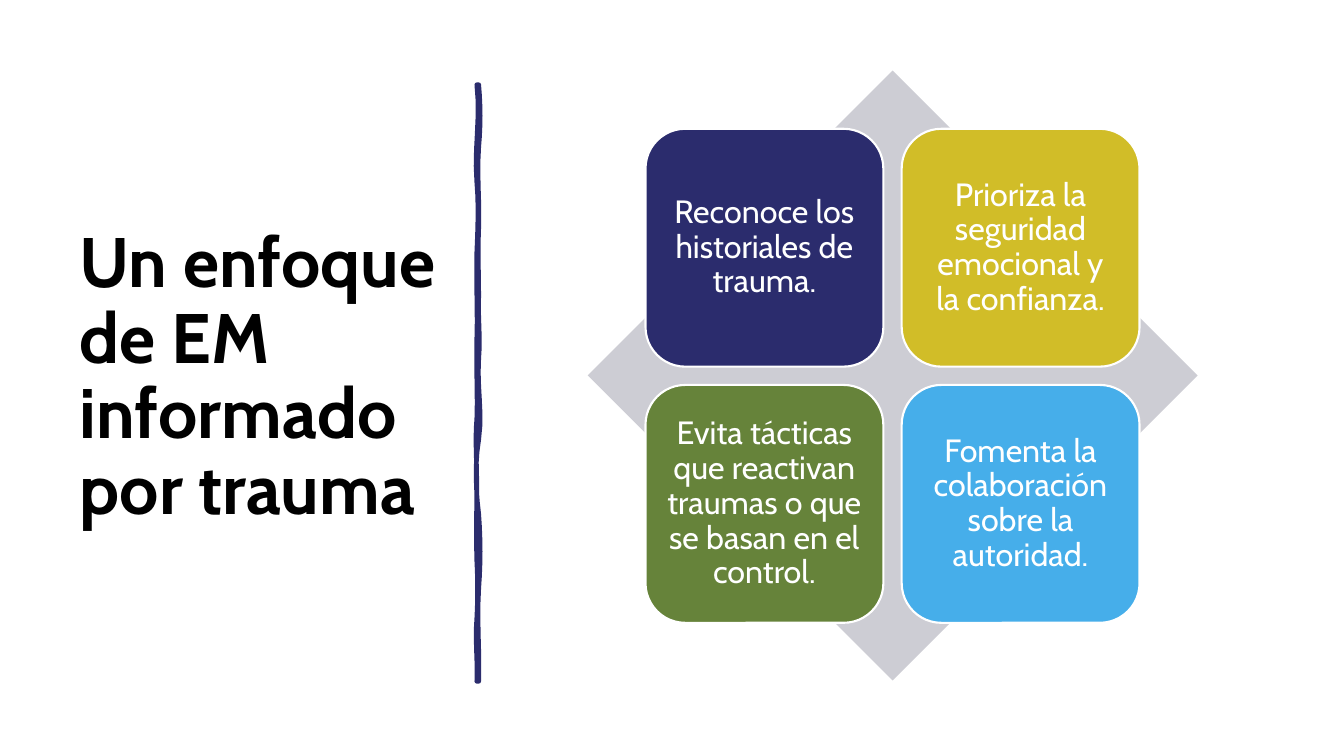
"""Builds a slide on a trauma-informed approach with four principle cards."""
from lxml.etree import SubElement
from pptx import Presentation
from pptx.dml.color import RGBColor
from pptx.enum.shapes import MSO_SHAPE
from pptx.enum.text import MSO_ANCHOR, MSO_AUTO_SIZE, PP_ALIGN
from pptx.oxml.ns import qn
from pptx.util import Pt

NAVY, WHITE, BLACK, GREY = "2B2C6D", "FFFFFF", "000000", "CDCDD4"
PRINCIPLES = [
    ("Reconoce los historiales de trauma.", NAVY),
    ("Prioriza la seguridad emocional y la confianza.", "D1BD28"),
    ("Evita tácticas que reactivan traumas o que se basan en el control.", "66833A"),
    ("Fomenta la colaboración sobre la autoridad.", "46AEEA"),
]
DIVIDER_TOP, DIVIDER_BOTTOM = 60.5, 486.7
RIGHT_WAVES = [
    (105.1, 1.4, 1.4), (162.7, -1.4, 0.7), (211.7, -0.7, 0), (256.3, -0.7, 1.4),
    (313.9, -1.4, 2.9), (367.2, -2.9, -2.2), (420.5, 1.4, 1.4),
    (DIVIDER_BOTTOM, -1.4, 0.7),
]
LEFT_WAVES = [
    (441.4, 0.7, -1.4), (401, 0.7, 0.7), (343.4, -0.7, 0), (298.8, 0, -1.4),
    (241.2, 0.7, -0.7), (180, 0.7, -0.7), (130.3, 0.7, 1.4),
    (DIVIDER_TOP, -2.2, 2.9),
]


def color(hex_value):
    """Turn a hex string into a colour."""
    return RGBColor.from_string(hex_value)


def paint(shape, fill, line=None, width=0):
    """Set the fill and outline of a shape and remove its shadow."""
    shape.shadow.inherit = False
    shape.fill.solid()
    shape.fill.fore_color.rgb = color(fill)
    if line:
        shape.line.color.rgb = color(line)
        shape.line.width = Pt(width)
    else:
        shape.line.fill.background()


def write(shape, text, size, hex_value, align, bold=False):
    """Write one wrapped, vertically centred paragraph."""
    frame = shape.text_frame
    frame.text = text
    frame.word_wrap = True
    frame.auto_size = MSO_AUTO_SIZE.NONE
    frame.vertical_anchor = MSO_ANCHOR.MIDDLE
    paragraph = frame.paragraphs[0]
    paragraph.alignment = align
    paragraph.line_spacing = 0.9
    font = paragraph.runs[0].font
    font.name, font.size, font.bold = "Cabin", Pt(size), bold
    font.color.rgb = color(hex_value)


def add_title(slide, text):
    """Place and format the title placeholder."""
    title = slide.shapes.title
    title.left, title.top = Pt(49.7), Pt(50.4)
    title.width, title.height = Pt(269.3), Pt(439.9)
    write(title, text, 50, BLACK, PP_ALIGN.LEFT, bold=True)


def wavy_edge(x, y, waves, steps=6):
    """List points along an edge that bulges sideways between its knots."""
    points = [(Pt(x), Pt(y))]
    for end, first, second in waves:
        for step in range(1, steps + 1):
            t = step / steps
            bulge = 3 * t * (1 - t) * ((1 - t) * first + t * second)
            points.append((Pt(x + bulge), Pt(y + (end - y) * t)))
        y = end
    return points


def add_divider(slide):
    """Draw the hand-drawn vertical divider."""
    outline = (wavy_edge(342, DIVIDER_TOP, RIGHT_WAVES)
               + wavy_edge(340.6, DIVIDER_BOTTOM, LEFT_WAVES))
    builder = slide.shapes.build_freeform(*outline[0])
    builder.add_line_segments(outline[1:], close=True)
    divider = builder.convert_to_shape()
    paint(divider, NAVY, NAVY, 3.25)
    SubElement(divider.line._get_or_add_ln(), qn("a:round"))


def add_diamond(slide):
    """Draw the diamond behind the cards."""
    diamond = slide.shapes.add_shape(
        MSO_SHAPE.DIAMOND, Pt(419.8), Pt(50.4), Pt(435.6), Pt(435.6))
    paint(diamond, GREY)


def add_cards(slide):
    """Lay out the principles as a two-by-two grid of cards."""
    left, top, size, pitch = 461.1, 92, 169.9, 183
    for index, (text, fill) in enumerate(PRINCIPLES):
        row, column = divmod(index, 2)
        card = slide.shapes.add_shape(
            MSO_SHAPE.ROUNDED_RECTANGLE, Pt(left + column * pitch),
            Pt(top + row * pitch), Pt(size), Pt(size))
        paint(card, fill, WHITE, 1.5)
        write(card, text, 23, WHITE, PP_ALIGN.CENTER)
        frame = card.text_frame
        frame.margin_left = frame.margin_right = Pt(7)
        frame.margin_top = frame.margin_bottom = Pt(7)


def main():
    """Build and save the slide."""
    deck = Presentation()
    deck.slide_width, deck.slide_height = Pt(960), Pt(540)
    slide = deck.slides.add_slide(deck.slide_layouts[5])
    add_title(slide, "Un enfoque de EM informado por trauma")
    add_divider(slide)
    add_diamond(slide)
    add_cards(slide)
    deck.save("out.pptx")


if __name__ == "__main__":
    main()
